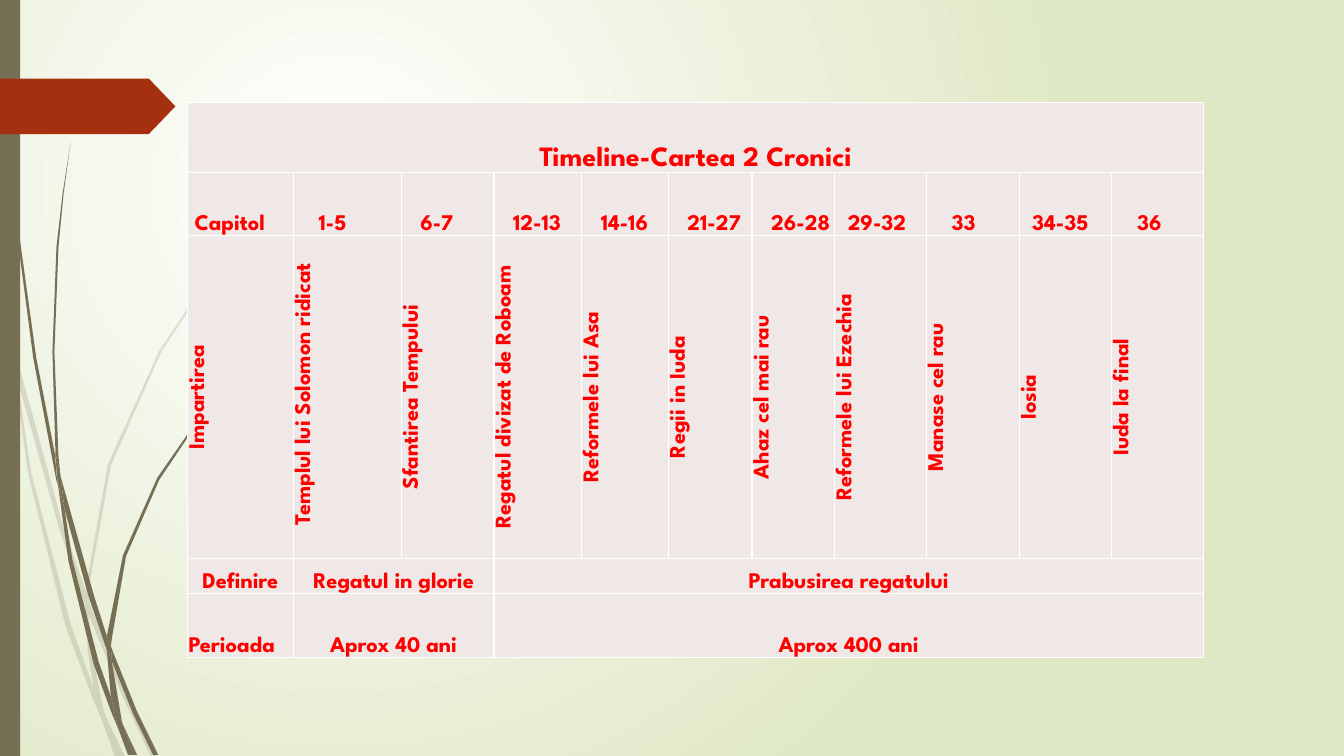
from dataclasses import dataclass

from lxml import etree
from pptx import Presentation
from pptx.dml.color import RGBColor
from pptx.enum.shapes import MSO_SHAPE
from pptx.enum.text import MSO_ANCHOR, PP_ALIGN
from pptx.oxml.ns import qn
from pptx.util import Inches, Pt

RECT = MSO_SHAPE.RECTANGLE
PENTAGON = MSO_SHAPE.PENTAGON
BOTTOM, MIDDLE = MSO_ANCHOR.BOTTOM, MSO_ANCHOR.MIDDLE
LEFT, CENTER = PP_ALIGN.LEFT, PP_ALIGN.CENTER

COLORS = {
    "glow": "FFFFFF",
    "meadow": "DFE8C4",
    "stem": "766F54",
    "tag": "A53010",
    "cell": "F0E8E7",
    "border": "FFFFFF",
    "text": "FF0000",
}
FONT = "League Spartan"
WIDTH, HEIGHT = 13.33, 7.5
COL_WIDTHS = [1.05, 1.07, 0.92, 0.87, 0.86, 0.83, 0.82, 0.91, 0.92, 0.92, 0.91]
ROW_HEIGHTS = [0.69, 0.63, 3.2, 0.35, 0.63]
TABLE_LEFT, TABLE_TOP = 1.86, 1.02
INDENT_STEP = 0.06
UNITS = 100


@dataclass
class Grass:
    blades: list[list[tuple[float, float]]]
    opacity: int = 100


@dataclass
class Cell:
    text: str
    span: int = 1
    align: PP_ALIGN = CENTER
    indent: int = 0
    upright: bool = False
    size: int = 16


PALE_GRASS = Grass([
    [(0.11, 3.5), (0.09, 3.22), (0, 2.82), (0, 2.99), (0.1, 3.44)],
    [(0.58, 5.22), (0.84, 5.99), (0.85, 5.86), (0.62, 5.2), (0.14, 3.45), (0.17, 3.76)],
    [(0.92, 6.07), (0.88, 5.96), (0.88, 6.1), (1.23, 6.94), (1.5, 7.51), (1.55, 7.51),
     (1.27, 6.92)],
    [(1.19, 7.51), (1.24, 7.51), (1.05, 7.11)],
    [(0.93, 6.83), (0.7, 6.19), (0.31, 4.69), (0.17, 3.76), (0.11, 3.5), (0.28, 4.7),
     (0.65, 6.21), (0.92, 6.93), (1.01, 7.14), (0.99, 7.07)],
    [(0.84, 5.99), (0.87, 6.46), (0.93, 6.83), (0.96, 6.92), (1.05, 7.11), (1.03, 7.06),
     (0.91, 6.46), (0.88, 6.1), (0.88, 6.08)],
    [(0.88, 5.84), (1.1, 4.62), (1.6, 3.49), (2.29, 2.45), (2.68, 1.98), (2.9, 1.75),
     (3.12, 1.54), (3.12, 1.53), (2.89, 1.75), (2.68, 1.97), (2.28, 2.44), (1.58, 3.48),
     (1.07, 4.61), (0.85, 5.84), (0.85, 5.86), (0.88, 5.96)],
    [(1.01, 7.14), (1.14, 7.51), (1.19, 7.51)],
    [(0.88, 6.08), (0.88, 6.1), (0.88, 5.96), (0.85, 5.86), (0.84, 5.99)],
    [(0.96, 6.92), (0.93, 6.83), (0.99, 7.07), (1.01, 7.14), (1.19, 7.51), (1.05, 7.11)],
], opacity=20)
DARK_GRASS = Grass([
    [(0.07, 1.1), (0.17, 2.33), (0.33, 3.55), (0.56, 4.77), (0.57, 4.81), (0.55, 4.57),
     (0.55, 4.53), (0.36, 3.55), (0.19, 2.32), (0.08, 1.09), (0.05, 0.48), (0.04, 0),
     (0.03, 0), (0.04, 0.48)],
    [(0.88, 5.92), (1.06, 6.45), (1.06, 6.33), (1.06, 6.31), (0.93, 5.9), (0.6, 4.72),
     (0.64, 5.05)],
    [(1.13, 6.49), (1.1, 6.41), (1.11, 6.56), (1.32, 7.08), (1.52, 7.49), (1.57, 7.49),
     (1.36, 7.06)],
    [(1.1, 6.91), (0.98, 6.57), (0.72, 5.56), (0.64, 5.05), (0.57, 4.77), (0.68, 5.57),
     (0.93, 6.59), (1.11, 7.08), (1.17, 7.22), (1.16, 7.17)],
    [(0.6, 4.72), (0.58, 4.53), (0.54, 3.49), (0.58, 2.45), (0.63, 1.93), (0.7, 1.41),
     (0.62, 1.93), (0.56, 2.45), (0.52, 3.49), (0.55, 4.49)],
    [(1.33, 7.49), (1.36, 7.49), (1.22, 7.19)],
    [(0.57, 4.77), (0.64, 5.05), (0.6, 4.72), (0.55, 4.49), (0.55, 4.53)],
    [(1.11, 6.33), (1.25, 5.52), (1.58, 4.76), (2.05, 4.06), (2.31, 3.74), (2.45, 3.59),
     (2.61, 3.44), (2.6, 3.44), (2.45, 3.58), (2.31, 3.73), (2.04, 4.05), (1.56, 4.74),
     (1.22, 5.51), (1.06, 6.31), (1.1, 6.41)],
    [(1.17, 7.22), (1.27, 7.49), (1.31, 7.49)],
    [(1.06, 6.45), (1.1, 6.91), (1.16, 7.06), (1.22, 7.19), (1.21, 7.16), (1.11, 6.56),
     (1.09, 6.51)],
    [(1.06, 6.45), (1.09, 6.51), (1.11, 6.56), (1.1, 6.41), (1.06, 6.31), (1.06, 6.33)],
    [(1.16, 7.06), (1.1, 6.91), (1.16, 7.17), (1.17, 7.22), (1.3, 7.49), (1.33, 7.49),
     (1.22, 7.19)],
])

CHAPTERS = [("Capitol", 1), ("1-5", 4), ("6-7", 3), ("12-13", 3), ("14-16", 3), ("21-27", 3),
            ("26-28", 3), ("29-32", 2), ("33", 4), ("34-35", 2), ("36", 4)]
SECTIONS = ["Impartirea", " Templul lui Solomon ridicat", "Sfantirea Tempului",
            "Regatul divizat de Roboam", "Reformele lui Asa", "Regii in Iuda",
            "Ahaz cel mai rau", "Reformele lui Ezechia", "Manase cel rau", "Iosia",
            "Iuda la final"]
ROWS = [
    [Cell("Timeline-Cartea 2 Cronici", span=11, size=20)],
    [Cell(text, align=LEFT, indent=indent) for text, indent in CHAPTERS],
    [Cell(text, upright=True) for text in SECTIONS],
    [Cell("Definire"), Cell("Regatul in glorie", span=2), Cell("Prabusirea regatului", span=8)],
    [Cell("Perioada", align=LEFT), Cell("Aprox 40 ani", span=2), Cell("Aprox 400 ani", span=8)],
]


def rgb(name: str) -> RGBColor:
    return RGBColor.from_string(COLORS[name])


def paint(sp, color: str, opacity: int = 100) -> None:
    sp.shadow.inherit = False
    sp.fill.solid()
    sp.fill.fore_color.rgb = rgb(color)
    sp.line.fill.background()
    if opacity < 100:
        clr = next(sp.element.spPr.iter(qn("a:srgbClr")))
        etree.SubElement(clr, qn("a:alpha"), val=str(opacity * 1000))


def paint_background(slide) -> None:
    fill = slide.background.fill
    fill.gradient()
    for position, (stop, color) in enumerate(zip(fill.gradient_stops, ("glow", "meadow"))):
        stop.color.rgb = rgb(color)
        stop.position = position
    grad = next(slide.element.iter(qn("a:gradFill")))
    grad.remove(grad.find(qn("a:lin")))
    radial = etree.SubElement(grad, qn("a:path"), path="circle")
    etree.SubElement(radial, qn("a:fillToRect"), l="50000", t="50000", r="100000", b="100000")


def add_grass(slide, grass: Grass) -> None:
    group = slide.shapes.add_group_shape()
    for blade in grass.blades:
        points = [(x * UNITS, y * UNITS) for x, y in blade]
        builder = group.shapes.build_freeform(*points[0], scale=Inches(1) / UNITS)
        builder.add_line_segments(points[1:], close=True)
        paint(builder.convert_to_shape(), "stem", grass.opacity)


def add_borders(cell) -> None:
    tc_pr = cell._tc.get_or_add_tcPr()
    for side in ("lnL", "lnR", "lnT", "lnB"):
        ln = etree.SubElement(tc_pr, qn(f"a:{side}"), w=str(Pt(1)))
        fill = etree.SubElement(ln, qn("a:solidFill"))
        etree.SubElement(fill, qn("a:srgbClr"), val=COLORS["border"])


def fill_cell(cell, item: Cell) -> None:
    cell.margin_left = Inches(0.01 + item.indent * INDENT_STEP)
    cell.margin_right = cell.margin_top = Inches(0.01)
    cell.margin_bottom = 0
    cell.vertical_anchor = MIDDLE if item.upright else BOTTOM
    if item.upright:
        cell._tc.get_or_add_tcPr().set("vert", "vert270")
    p = cell.text_frame.paragraphs[0]
    p.text = item.text
    p.alignment = item.align
    font = p.runs[0].font
    font.name, font.size, font.bold = FONT, Pt(item.size), True
    font.color.rgb = rgb("text")


def add_timeline(slide) -> None:
    frame = slide.shapes.add_table(
        len(ROW_HEIGHTS), len(COL_WIDTHS), Inches(TABLE_LEFT), Inches(TABLE_TOP),
        Inches(sum(COL_WIDTHS)), Inches(sum(ROW_HEIGHTS)))
    table = frame.table
    table.first_row = table.horz_banding = False
    for column, width in zip(table.columns, COL_WIDTHS):
        column.width = Inches(width)
    for row, height in zip(table.rows, ROW_HEIGHTS):
        row.height = Inches(height)
    for cell in table.iter_cells():
        add_borders(cell)
        cell.fill.solid()
        cell.fill.fore_color.rgb = rgb("cell")
    for r, items in enumerate(ROWS):
        c = 0
        for item in items:
            cell = table.cell(r, c)
            if item.span > 1:
                cell.merge(table.cell(r, c + item.span - 1))
            fill_cell(cell, item)
            c += item.span


def main() -> None:
    prs = Presentation()
    prs.slide_width, prs.slide_height = Inches(WIDTH), Inches(HEIGHT)
    slide = prs.slides.add_slide(prs.slide_layouts[6])
    paint_background(slide)
    add_grass(slide, PALE_GRASS)
    add_grass(slide, DARK_GRASS)
    bar = slide.shapes.add_shape(RECT, 0, 0, Inches(0.2), prs.slide_height)
    paint(bar, "stem")
    tag = slide.shapes.add_shape(PENTAGON, 0, Inches(0.78), Inches(1.74), Inches(0.55))
    tag.adjustments[0] = 0.48
    paint(tag, "tag")
    add_timeline(slide)
    prs.save("out.pptx")


if __name__ == "__main__":
    main()
